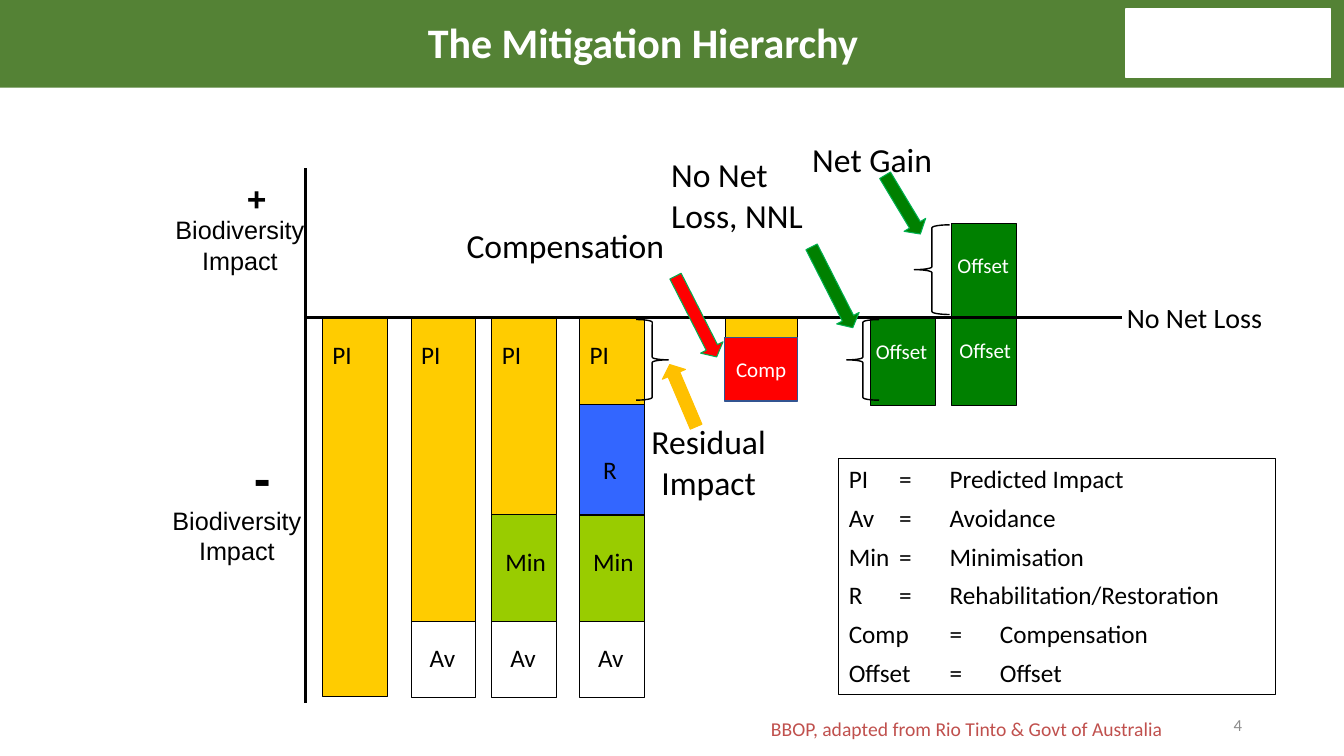
from pptx import Presentation
from pptx.dml.color import RGBColor as RGB
from pptx.enum.shapes import MSO_CONNECTOR as Link, MSO_SHAPE as Shape
from pptx.enum.text import MSO_ANCHOR as Anchor, MSO_AUTO_SIZE as Fit, PP_ALIGN as Align
from pptx.oxml.ns import qn
from pptx.util import Inches, Pt
from lxml.etree import SubElement

CELL = Inches(0.1)
COLS, ROWS = 133.33, 75
AXIS = 31.5
WIDE = 6.4

HUES = {
    "band": "548235", "white": "FFFFFF", "black": "000000", "gold": "FFCC00",
    "lime": "99CC00", "blue": "3366FF", "green": "008000", "edge": "00B050",
    "red": "FF0000", "navy": "325491", "amber": "FFC000", "brick": "C0504D",
    "grey": "8C8C8C",
}

PARTS = {
    "PI": (AXIS, 37.6, "gold", 0, 33.2, 3.9),
    "Av": (61.7, 7.5, "white", 0.85, 63.2, 4.6),
    "Min": (51, 10.7, "lime", 0.35, 53.7, 6.1),
    "R": (40.1, 11, "blue", 1.35, 44.6, 3.4),
}

BARS = [
    (32, ["PI"]),
    (40.8, ["PI", "Av"]),
    (48.8, ["PI", "Av", "Min"]),
    (57.5, ["PI", "Av", "Min", "R"]),
]

KEYS = [
    ("PI", "Predicted Impact"),
    ("Av", "Avoidance"),
    ("Min", "Minimisation"),
    ("R", "Rehabilitation/Restoration"),
    ("Comp", "Compensation"),
    ("Offset", "Offset"),
]


def grid(*cells):
    return [round(cell * CELL) for cell in cells]


def tint(hue):
    return RGB.from_string(HUES[hue])


def style(frame, size, hue="black", face="Calibri", bold=False, align=Align.LEFT):
    for para in frame.paragraphs:
        para.alignment = align
        for run in para.runs:
            run.font.size = Pt(size)
            run.font.name = face
            run.font.bold = bold
            run.font.color.rgb = tint(hue)


def place(item, left, top, width, height):
    item.left, item.top, item.width, item.height = grid(left, top, width, height)


def shape(slide, kind, box, fill=None, edge="black", line=0.75, turn=0):
    item = slide.shapes.add_shape(kind, *grid(*box))
    item.shadow.inherit = False
    item.rotation = turn
    if fill:
        item.fill.solid()
        item.fill.fore_color.rgb = tint(fill)
    else:
        item.fill.background()
    if edge:
        item.line.color.rgb = tint(edge)
        item.line.width = Pt(line)
    else:
        item.line.fill.background()
    return item


def block(slide, box, fill, edge="black", line=0.75):
    return shape(slide, Shape.RECTANGLE, box, fill, edge, line)


def arrow(slide, box, turn, fill, edge="edge"):
    item = shape(slide, Shape.UP_ARROW, box, fill, edge, turn=turn)
    item.adjustments[0] = 0.5
    item.adjustments[1] = 0.425


def brace(slide, box, turn=0):
    shape(slide, Shape.RIGHT_BRACE, box, line=1, turn=turn)


def rule(slide, *ends):
    item = slide.shapes.add_connector(Link.STRAIGHT, *grid(*ends))
    item.line.color.rgb = tint("black")
    item.line.width = Pt(2)
    SubElement(item.element.spPr, qn("a:effectLst"))


def label(slide, text, box, size, wrap=False, **look):
    frame = slide.shapes.add_textbox(*grid(*box)).text_frame
    frame.word_wrap = wrap
    frame.text = text
    style(frame, size, **look)
    return frame


def header(slide):
    title = slide.shapes.title
    band = block(slide, (0, -0.3, COLS, 9), "band", None)
    title.element.addprevious(band.element)
    block(slide, (111.7, 0.9, 20.3, 6.8), "white", "white", 1)
    place(title, 16.1, 0, 95.4, 9)
    frame = title.text_frame
    frame.text = "The Mitigation Hierarchy"
    frame.vertical_anchor = Anchor.MIDDLE
    frame.paragraphs[0].line_spacing = 0.9
    style(frame, 30, "white", bold=True, align=Align.CENTER)


def legend(slide):
    body = slide.placeholders[1]
    place(body, 83.2, 45.5, 43.3, 23.4)
    body.line.color.rgb = tint("black")
    body.line.width = Pt(0.75)
    frame = body.text_frame
    frame.auto_size = Fit.NONE
    frame.text = "\n".join(f"{short}\t=\t{full}" for short, full in KEYS)
    for spot, para in enumerate(frame.paragraphs):
        props = para._p.get_or_add_pPr()
        props.set("marL", "0")
        props.set("indent", "0")
        SubElement(props, qn("a:buNone"))
        tabs = SubElement(props, qn("a:tabLst"))
        for stop in grid(8.7, 11.6):
            SubElement(tabs, qn("a:tab"), pos=str(stop), algn="l")
        para.space_before = Pt(6 if spot else 0)
    style(frame, 18)


def bars(slide):
    for left, names in BARS:
        for name in names:
            top, high, fill, shift, row, span = PARTS[name]
            block(slide, (left, top, WIDE, high), fill)
            label(slide, name, (left + shift, row, span, 4), 18)


def offsets(slide):
    block(slide, (72, 31.6, 7.1, 8), "gold")
    comp = block(slide, (71.9, 33.5, 7.2, 6.3), "red", "navy", 1).text_frame
    comp.text = "Comp"
    comp.vertical_anchor = Anchor.MIDDLE
    style(comp, 15, "white", align=Align.CENTER)
    block(slide, (86.4, AXIS, WIDE, 8.7), "green")
    block(slide, (94.4, 22.2, WIDE, 18), "green")
    for left, top in [(85.9, 33.1), (94, 24.6), (94.2, 33)]:
        label(slide, "Offset", (left, top, 7.2, 3.5), 15, hue="white")


def axes(slide):
    rule(slide, 30.3, 16.7, 30.3, 69.7)
    rule(slide, 30.3, AXIS, 111.3, AXIS)
    label(slide, "No Net Loss", (110.8, 29.3, 15.6, 4.4), 20)
    label(slide, "+", (23.5, 17.2, 4, 5), 24, face="Arial", bold=True)
    label(slide, "-", (24.2, 43.8, 4.6, 7.1), 36, face="Arial", bold=True)
    for left, top in [(16, 20.8), (15.7, 49.6)]:
        label(slide, "Biodiversity\nImpact", (left, top, 15.6, 7.1), 18,
              face="Arial", align=Align.CENTER)


def notes(slide):
    label(slide, "Net Gain", (79.6, 13.3, 14, 5), 24)
    label(slide, "No Net Loss, NNL", (65.6, 14.8, 16.8, 9.1), 24, True)
    label(slide, "Compensation", (45.3, 21.8, 24.4, 5), 24, True)
    label(slide, "Residual\nImpact", (63.2, 41.3, 14.2, 9.1), 24, align=Align.CENTER)
    arrow(slide, (88.3, 16.9, 2.5, 6.8), 149, "green")
    arrow(slide, (81.3, 24, 2.5, 9), 153, "green")
    arrow(slide, (67.8, 26.9, 2.5, 9), 153, "red")
    arrow(slide, (66.5, 35.9, 2.5, 6.7), 337, "amber", "amber")
    brace(slide, (63.1, 31.7, 3.2, 8))
    brace(slide, (84, 31.7, 3.2, 8), 180)
    brace(slide, (90.7, 22.3, 3.5, 8.9), 180)


def footer(slide):
    label(slide, "BBOP, adapted from Rio Tinto & Govt of Australia",
          (75.5, 70.6, 47.4, 3.4), 14, True, hue="brick")
    page = label(slide, "4", (115.4, 70.4, 8.8, 3.1), 12, True,
                 hue="grey", align=Align.RIGHT)
    page.vertical_anchor = Anchor.MIDDLE


def main():
    deck = Presentation()
    deck.slide_width, deck.slide_height = grid(COLS, ROWS)
    slide = deck.slides.add_slide(deck.slide_layouts[1])
    header(slide)
    legend(slide)
    bars(slide)
    offsets(slide)
    axes(slide)
    notes(slide)
    footer(slide)
    deck.save("out.pptx")


if __name__ == "__main__":
    main()
